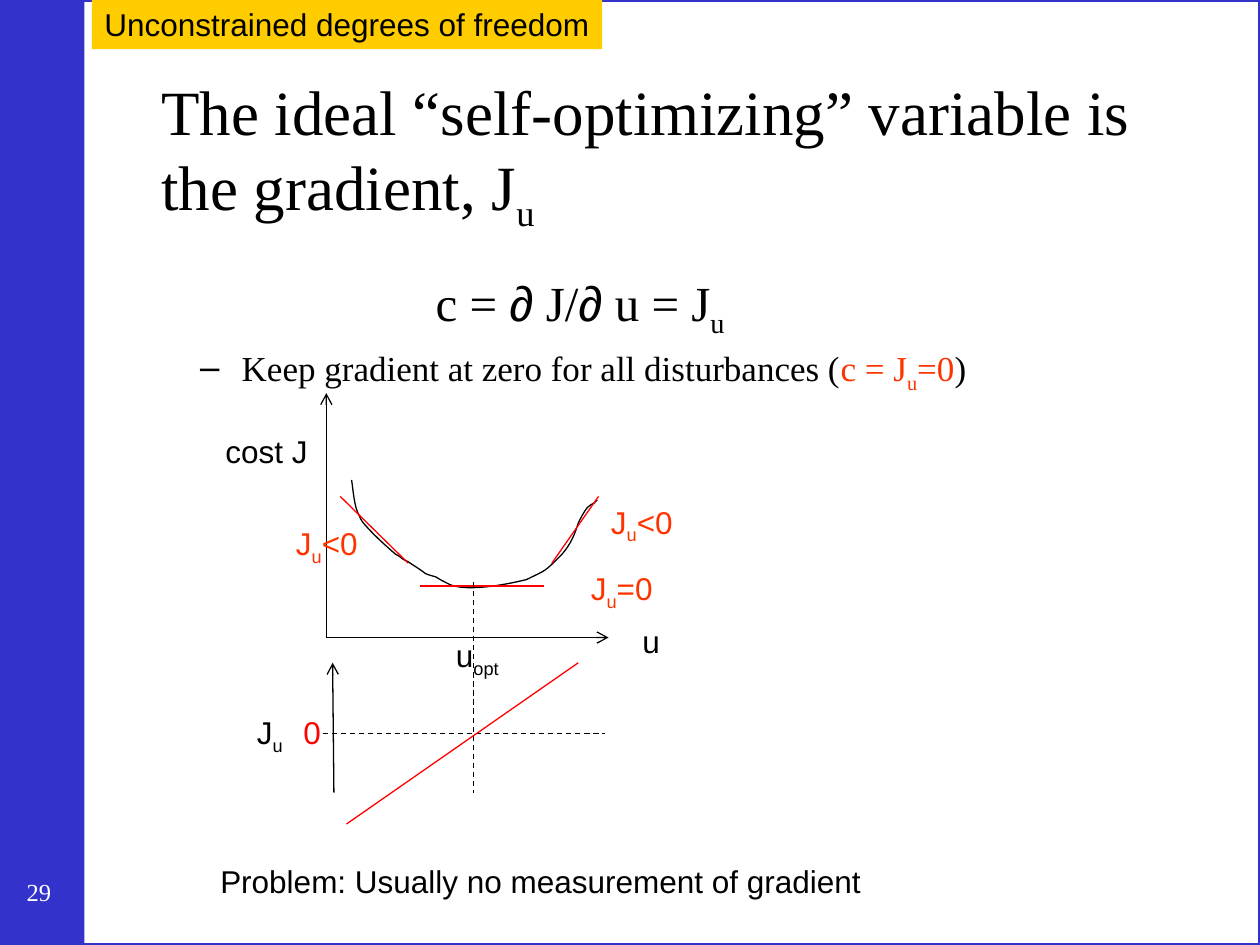
from lxml import etree
from pptx import Presentation
from pptx.dml.color import RGBColor
from pptx.enum import dml, shapes, text
from pptx.oxml import ns
from pptx.util import Inches, Pt

BLUE = RGBColor(0x33, 0x33, 0xCC)
GOLD = RGBColor(0xFF, 0xCC, 0x00)
RED = RGBColor(0xFF, 0, 0)
ORANGE = RGBColor(0xFF, 0x33, 0)
BLACK = RGBColor(0, 0, 0)
WHITE = RGBColor(0xFF, 0xFF, 0xFF)
SERIF, SANS = "Times New Roman", "Arial"

# Content: a leading "_" marks a subscript run
TITLE = ["The ideal “self-optimizing” variable is the gradient, J", "_u"]
FORMULA = [("c = ", SERIF), ("∂", SANS), (" J/", SERIF), ("∂", SANS),
           (" u = J", SERIF), ("_u", SERIF)]
POINT = [("Keep gradient at zero for all disturbances (", BLACK),
         ("c = J", ORANGE), ("_u", ORANGE), ("=0", ORANGE), (")", BLACK)]
BANNER = "Unconstrained degrees of freedom"
PROBLEM = "Problem: Usually no measurement of gradient"

# Labels: runs, box, colour
COST_TEXT = [
    (["u"], (5, 4.89, 0.39, 0.46), BLACK),
    (["cost J"], (1.69, 3.38, 0.99, 0.46), BLACK),
    (["J", "_u", "=0"], (4.59, 4.47, 0.81, 0.46), ORANGE),
    (["J", "_u", "<0"], (2.25, 4.11, 0.71, 0.4), ORANGE),
    (["J", "_u", "<0"], (4.75, 3.94, 0.71, 0.4), ORANGE),
]
GRAD_TEXT = [
    (["u", "_opt"], (3.52, 5, 0.58, 0.4), BLACK),
    (["J", "_u"], (1.94, 5.61, 0.42, 0.4), BLACK),
    (["0"], (2.31, 5.61, 0.34, 0.4), RED),
]
# Lines: start, end, colour, style
COST_LINES = [
    ((2.59, 5.06), (4.83, 5.06), BLACK, "arrow"),
    ((2.59, 5.06), (2.59, 3.12), BLACK, "arrow"),
    ((3.33, 4.65), (4.32, 4.65), RED, ""),
    ((2.7, 3.94), (3.24, 4.47), RED, ""),
    ((4.38, 4.47), (4.75, 3.94), RED, ""),
]
GRAD_LINES = [
    ((3.76, 4.62), (3.76, 6.29), BLACK, "dash"),
    ((2.65, 6.29), (2.64, 5.26), BLACK, "arrow"),
    ((2.56, 5.82), (4.8, 5.82), BLACK, "dash"),
    ((2.75, 6.54), (4.59, 5.26), RED, ""),
]
# Cost curve in hundredths of an inch: start, then three Bezier points a segment
CURVE = [
    (279, 381),
    (280, 386), (281, 403), (285, 409),
    (286, 412), (288, 415), (290, 417),
    (297, 425), (307, 434), (314, 440),
    (316, 441), (318, 442), (320, 444),
    (322, 445), (325, 446), (327, 448),
    (343, 458), (333, 454), (346, 458),
    (349, 460), (353, 462), (357, 464),
    (374, 471), (414, 461), (418, 460),
    (434, 452), (431, 455), (446, 440),
    (451, 434), (454, 429), (457, 421),
    (458, 419), (458, 417), (459, 415),
    (461, 411), (463, 407), (466, 403),
    (468, 401), (470, 400), (472, 399),
    (472, 398), (473, 398), (474, 397),
]


def put(para, words, size, face, color):
    run = para.add_run()
    run.text = words.removeprefix("_")
    font = run.font
    font.size, font.name, font.color.rgb = Pt(size), face, color
    if words.startswith("_"):
        font._element.set("baseline", "-25000")


def label(tree, runs, box, color=BLACK, size=18, face=SANS, wrap=False):
    shape = tree.add_textbox(*map(Inches, box))
    frame = shape.text_frame
    frame.word_wrap = wrap
    for words in runs:
        put(frame.paragraphs[0], words, size, face, color)
    return frame


def rect(tree, box, fill=None, line=None):
    shape = tree.add_shape(shapes.MSO_SHAPE.RECTANGLE, *map(Inches, box))
    shape.shadow.inherit = False
    if fill is None:
        shape.fill.background()
    else:
        shape.fill.solid()
        shape.fill.fore_color.rgb = fill
    if line is None:
        shape.line.fill.background()
    else:
        shape.line.color.rgb, shape.line.width = line, Pt(2.25)
    return shape


def draw(tree, start, end, color, style):
    line = tree.add_connector(shapes.MSO_CONNECTOR.STRAIGHT,
                              *map(Inches, start + end))
    line.line.color.rgb, line.line.width = color, Pt(0.75)
    if style == "dash":
        line.line.dash_style = dml.MSO_LINE.DASH
    if style == "arrow":
        etree.SubElement(line.line._get_or_add_ln(), ns.qn("a:tailEnd"),
                         type="arrow")
    etree.SubElement(line._element.spPr, ns.qn("a:effectLst"))


def curve(tree, points):
    pen = tree.build_freeform(*points[0], scale=Inches(0.01))
    pen.add_line_segments(points[1:], close=False)
    shape = pen.convert_to_shape()
    shape.shadow.inherit = False
    shape.fill.background()
    shape.line.color.rgb, shape.line.width = BLACK, Pt(0.75)
    # Turn each three straight steps into one Bezier segment
    steps = list(shape._element.iter(ns.qn("a:lnTo")))
    for i in range(0, len(steps), 3):
        bend = etree.Element(ns.qn("a:cubicBezTo"))
        steps[i].addprevious(bend)
        for step in steps[i:i + 3]:
            bend.append(step[0])
            step.getparent().remove(step)


deck = Presentation()
deck.slide_width, deck.slide_height = Inches(10), Inches(7.5)
slide = deck.slides.add_slide(deck.slide_layouts[5])
tree = slide.shapes

# Side bar, border and page number
rect(tree, (0, 0, 0.67, 7.5), BLUE)
rect(tree, (0, 0, 10, 7.5), line=BLUE)
page = label(tree, ["29"], (0.08, 6.91, 0.46, 0.42), WHITE, 14, SERIF)
page.paragraphs[0].alignment = text.PP_ALIGN.CENTER

# Title
title = tree.title
title.left, title.top, title.width, title.height = map(
    Inches, (1.18, 0.59, 8.5, 1.25))
title.text_frame.vertical_anchor = text.MSO_ANCHOR.MIDDLE
head = title.text_frame.paragraphs[0]
head.alignment = text.PP_ALIGN.LEFT
for words in TITLE:
    put(head, words, 36, SERIF, BLACK)

# Formula and bullet
body = label(tree, [], (0.98, 2.11, 8.9, 1), wrap=True)
form = body.paragraphs[0]
form._p.get_or_add_pPr().set("marL", str(Inches(2.38)))
for words, face in FORMULA:
    put(form, words, 28, face, BLACK)
point = body.add_paragraph()
point.level = 1
point.space_before = Pt(4.5)
props = point._p.get_or_add_pPr()
props.set("marL", str(Inches(0.84)))
props.set("indent", str(Inches(-0.33)))
etree.SubElement(props, ns.qn("a:buChar"), char="–")
for words, color in POINT:
    put(point, words, 20, SERIF, color)

# Banner
banner = rect(tree, (0.73, -0.01, 4.05, 0.4), GOLD).text_frame
banner.word_wrap = False
banner.vertical_anchor = text.MSO_ANCHOR.TOP
banner.paragraphs[0].alignment = text.PP_ALIGN.LEFT
put(banner.paragraphs[0], BANNER, 18, SANS, BLACK)

# Cost plot above, gradient plot below
for lines, labels, bends in ((COST_LINES, COST_TEXT, CURVE),
                             (GRAD_LINES, GRAD_TEXT, None)):
    plot = tree.add_group_shape().shapes
    if bends:
        curve(plot, bends)
    for line in lines:
        draw(plot, *line)
    for item in labels:
        label(plot, *item)

# Closing remark
label(tree, [PROBLEM], (1.65, 6.79, 5.33, 0.71))

deck.save("out.pptx")
